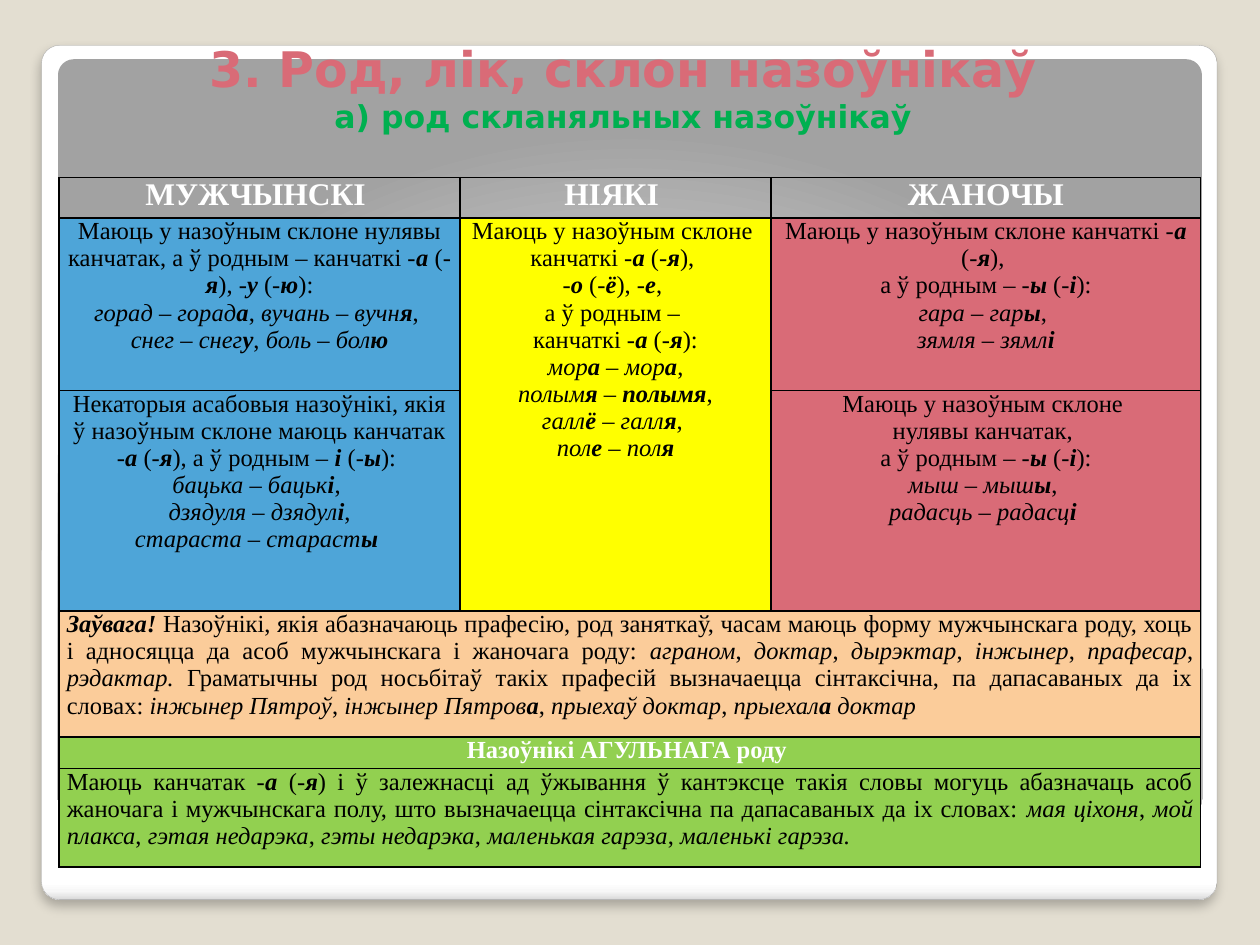
from lxml import etree
from pptx import Presentation
from pptx.dml.color import RGBColor
from pptx.enum.shapes import MSO_SHAPE
from pptx.enum.text import MSO_ANCHOR, PP_ALIGN
from pptx.oxml import parse_xml
from pptx.oxml.ns import nsdecls, qn
from pptx.util import Inches, Pt

ROUNDED = MSO_SHAPE.ROUNDED_RECTANGLE
CENTER, JUSTIFY = PP_ALIGN.CENTER, PP_ALIGN.JUSTIFY
BOTTOM = MSO_ANCHOR.BOTTOM

THEME = {
    "background": "E3DED1", "frame_line": "A4A4A4", "border": "000000",
    "title": "D96B77", "subtitle": "00B050", "header": "FFFFFF", "body": "000000",
    "masculine": "4EA5D8", "neuter": "FFFF00", "feminine": "D96B77",
    "note": "FBCC9A", "common": "92D050",
    "title_font": "DejaVu Sans", "table_font": "Times New Roman",
    "title_size": 28, "subtitle_size": 18, "header_size": 18, "body_size": 14,
}
FRAME_STOPS = [(0, "FFFFFF"), (98, "FFFFFF"), (99, "F7F7F7"), (100, "DADADA")]
PANEL_STOPS = [(0, "FFFFFF"), (55, "E1E1E1"), (100, "A2A2A2")]
DOWNWARD = '<a:lin ang="5400000" scaled="0"/>'
FROM_BELOW = ('<a:path path="circle">'
              '<a:fillToRect l="50000" t="175000" r="50000" b="-75000"/></a:path>')

TITLE = [("3. Род, лік, склон назоўнікаў", "title"),
         ("а) род скланяльных назоўнікаў", "subtitle")]

# Markup: _italic_, *bold italic*
MASCULINE_MAIN = [
    "Маюць у назоўным склоне нулявы канчатак, а ў родным – канчаткі -*а* (-*я*), -*у* (-*ю*):",
    "_горад – горад_*а*, _вучань – вучн_*я*, ",
    "_снег – снег_*у*, _боль – бол_*ю*",
]
MASCULINE_PERSONS = [
    "Некаторыя асабовыя назоўнікі, якія ў назоўным склоне маюць канчатак "
    "-*а* (-*я*), а ў родным – *і* (-*ы*): ",
    "_бацька – бацьк_*і*, ",
    "_дзядуля – дзядул_*і*,",
    "_стараста – стараст_*ы *",
]
NEUTER = [
    "Маюць у назоўным склоне ",
    "канчаткі -*а* (-*я*), ",
    "-*о* (-*ё*), -*е*, ",
    "а ў родным – ",
    "канчаткі -*а* (-*я*):",
    "_мор_*а*_ – мор_*а*,",
    "_полым_*я*_ – _*полымя*,",
    "_галл_*ё*_ – галл_*я*, ",
    "_пол_*е*_ – пол_*я*",
]
FEMININE_MAIN = [
    "Маюць у назоўным склоне канчаткі -*а* (-*я*), ",
    "а ў родным – -*ы* (-*і*):",
    "_гара – гар_*ы*, ",
    "_зямля – зямл_*і*",
]
FEMININE_ZERO = [
    "Маюць у назоўным склоне ",
    "нулявы канчатак, ",
    "а ў родным – -*ы* (-*і*):",
    "_мыш – мыш_*ы*, ",
    "_радасць – радасц_*і *",
]
NOTE = [
    "*Заўвага!* Назоўнікі, якія абазначаюць прафесію, род заняткаў, часам маюць форму "
    "мужчынскага роду, хоць і адносяцца да асоб мужчынскага і жаночага роду: "
    "_аграном_,_ доктар_,_ дырэктар_,_ інжынер_,_ прафесар_,_ рэдактар._ "
    "Граматычны род носьбітаў такіх прафесій вызначаецца сінтаксічна, па дапасаваных "
    "да іх словах: _інжынер Пятроў_, _інжынер Пятров_*а*, _прыехаў доктар_, "
    "_прыехал_*а*_ доктар_",
]
COMMON = [
    "Маюць канчатак -*а* (-*я*) і ў залежнасці ад ўжывання ў кантэксце такія словы "
    "могуць абазначаць асоб жаночага і мужчынскага полу, што вызначаецца сінтаксічна "
    "па дапасаваных да іх словах: _мая ціхоня_, _мой плакса_, _гэтая недарэка_, "
    "_гэты недарэка_, _маленькая гарэза_, _маленькі гарэза._",
]

COLUMN_WIDTHS = [3.18, 2.47, 3.41]
ROW_HEIGHTS = [0.32, 1.37, 1.75, 1, 0.25, 0.78]
HEADER = {"color": "header", "bold": True}
# row, column, row span, column span, fill, paragraphs, text options
CELLS = [
    (0, 0, 1, 1, None, ["МУЖЧЫНСКІ "], {**HEADER, "size": "header_size"}),
    (0, 1, 1, 1, None, ["НІЯКІ "], {**HEADER, "size": "header_size"}),
    (0, 2, 1, 1, None, ["ЖАНОЧЫ"], {**HEADER, "size": "header_size"}),
    (1, 0, 1, 1, "masculine", MASCULINE_MAIN, {}),
    (1, 1, 2, 1, "neuter", NEUTER, {}),
    (1, 2, 1, 1, "feminine", FEMININE_MAIN, {}),
    (2, 0, 1, 1, "masculine", MASCULINE_PERSONS, {}),
    (2, 2, 1, 1, "feminine", FEMININE_ZERO, {}),
    (3, 0, 1, 3, "note", NOTE, {"align": JUSTIFY}),
    (4, 0, 1, 3, "common", ["Назоўнікі АГУЛЬНАГА роду "], HEADER),
    (5, 0, 1, 3, "common", COMMON, {"align": JUSTIFY}),
]


def color(name):
    return RGBColor.from_string(THEME[name])


def add_card(slide, box, stops, direction):
    shape = slide.shapes.add_shape(ROUNDED, *map(Inches, box))
    shape.adjustments[0] = 0.021
    shape.shadow.inherit = False
    shape.line.fill.background()
    stop_xml = "".join(f'<a:gs pos="{position * 1000}"><a:srgbClr val="{value}"/></a:gs>'
                       for position, value in stops)
    gradient = parse_xml(f'<a:gradFill {nsdecls("a")} rotWithShape="1">'
                         f'<a:gsLst>{stop_xml}</a:gsLst>{direction}</a:gradFill>')
    shape._element.spPr.find(qn("a:prstGeom")).addnext(gradient)
    return shape


def add_soft_shadow(shape):
    effects = shape._element.spPr.find(qn("a:effectLst"))
    shadow = etree.SubElement(effects, qn("a:outerShdw"), blurRad=str(Pt(6)),
                              dist=str(Pt(4)), dir="5400000", rotWithShape="0")
    shade = etree.SubElement(shadow, qn("a:srgbClr"), val="000000")
    etree.SubElement(shade, qn("a:alpha"), val="25000")


def add_title(slide):
    text_frame = slide.shapes.add_textbox(
        Inches(0.39), Inches(0.39), Inches(9.11), Inches(1.02)).text_frame
    text_frame.word_wrap = True
    text_frame.vertical_anchor = BOTTOM
    text_frame.margin_top = 0
    text_frame.margin_bottom = Inches(0.34)
    text_frame.text = "\n".join(line for line, _ in TITLE)
    for paragraph, (_, role) in zip(text_frame.paragraphs, TITLE):
        paragraph.alignment = CENTER
        font = paragraph.runs[0].font
        font.name, font.bold = THEME["title_font"], True
        font.size, font.color.rgb = Pt(THEME[role + "_size"]), color(role)


def split_markup(text):
    """Yield (text, bold, italic) for each marked stretch."""
    for bold_index, section in enumerate(text.split("*")):
        bold = bold_index % 2 == 1
        for italic_index, piece in enumerate(section.split("_")):
            if piece:
                yield piece, bold, bold or italic_index % 2 == 1


def write_cell(cell, lines, align=CENTER, color_name="body", size="body_size", bold=False):
    cell.margin_left = cell.margin_right = Inches(0.06)
    cell.margin_top = cell.margin_bottom = 0
    cell.text_frame.text = "\n".join(lines)
    for paragraph, line in zip(cell.text_frame.paragraphs, lines):
        paragraph.text = ""
        paragraph.alignment = align
        for piece, strong, italic in split_markup(line):
            run = paragraph.add_run()
            run.text = piece
            font = run.font
            font.name, font.size = THEME["table_font"], Pt(THEME[size])
            font.bold, font.italic = bold or strong, italic
            font.color.rgb = color(color_name)


def add_borders(cell):
    properties = cell._tc.get_or_add_tcPr()
    for side in ("lnL", "lnR", "lnT", "lnB"):
        line = etree.SubElement(properties, qn(f"a:{side}"), w=str(Pt(1)))
        fill = etree.SubElement(line, qn("a:solidFill"))
        etree.SubElement(fill, qn("a:srgbClr"), val=THEME["border"])


def add_gender_table(slide):
    table = slide.shapes.add_table(
        len(ROW_HEIGHTS), len(COLUMN_WIDTHS), Inches(0.47), Inches(1.41),
        Inches(sum(COLUMN_WIDTHS)), Inches(sum(ROW_HEIGHTS))).table
    table.first_row = table.horz_banding = False
    for column, width in zip(table.columns, COLUMN_WIDTHS):
        column.width = Inches(width)
    for row, height in zip(table.rows, ROW_HEIGHTS):
        row.height = Inches(height)
    for cell in table.iter_cells():
        add_borders(cell)
    for row, column, row_span, column_span, fill, lines, options in CELLS:
        cell = table.cell(row, column)
        if row_span * column_span > 1:
            cell.merge(table.cell(row + row_span - 1, column + column_span - 1))
        if fill:
            cell.fill.solid()
            cell.fill.fore_color.rgb = color(fill)
        else:
            cell.fill.background()
        settings = dict(options)
        write_cell(cell, lines, color_name=settings.pop("color", "body"), **settings)


def main():
    presentation = Presentation()
    presentation.slide_width, presentation.slide_height = Inches(10), Inches(7.5)
    slide = presentation.slides.add_slide(presentation.slide_layouts[6])
    slide.background.fill.solid()
    slide.background.fill.fore_color.rgb = color("background")
    frame = add_card(slide, (0.33, 0.36, 9.33, 6.78), FRAME_STOPS, DOWNWARD)
    frame.line.color.rgb = color("frame_line")
    frame.line.width = Pt(0.16)
    add_soft_shadow(frame)
    add_card(slide, (0.46, 0.47, 9.08, 6), PANEL_STOPS, FROM_BELOW)
    add_title(slide)
    add_gender_table(slide)
    presentation.save("out.pptx")


if __name__ == "__main__":
    main()
